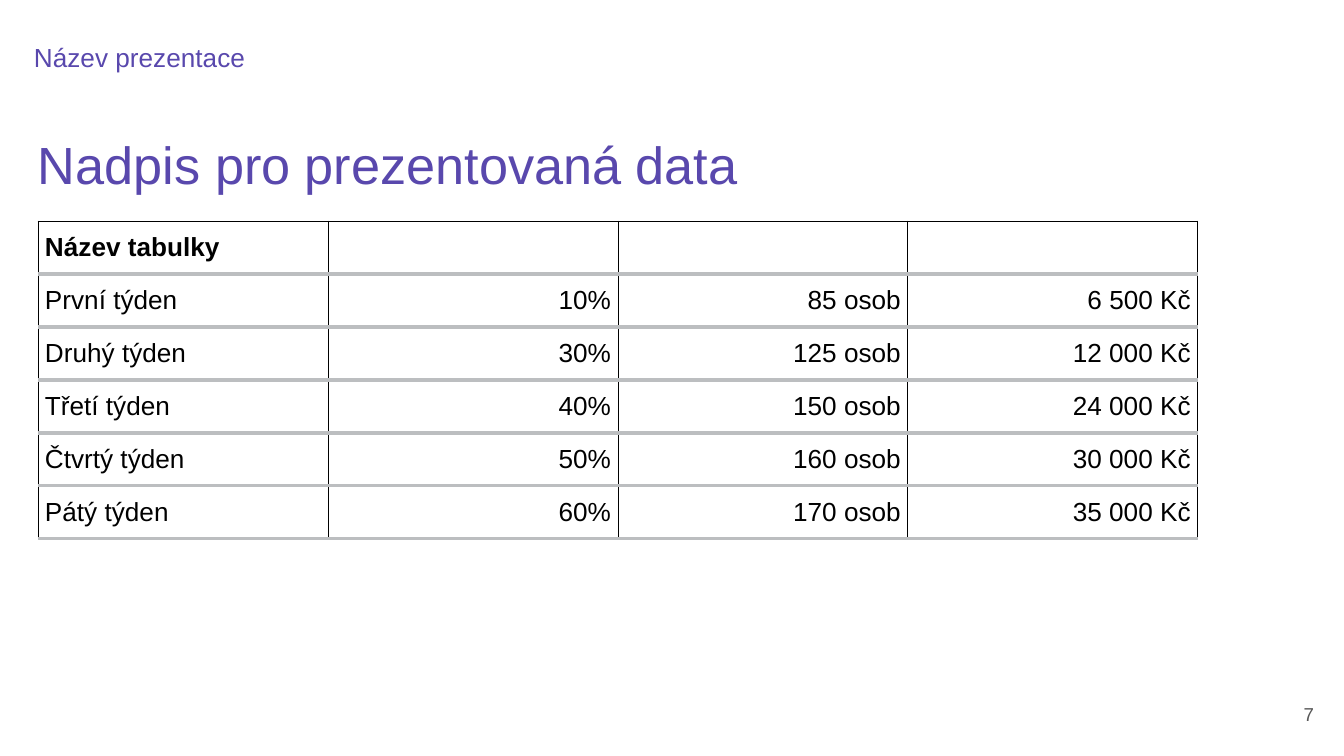
"""Build a slide with a heading and a table of weekly figures."""
from typing import NamedTuple

from lxml import etree
from pptx import Presentation
from pptx.dml.color import RGBColor
from pptx.enum.text import MSO_ANCHOR, MSO_AUTO_SIZE, PP_ALIGN
from pptx.oxml.ns import qn
from pptx.util import Emu, Pt

EMU_PER_PX = 914400 / 134.4
FONT = "Arial"
VIOLET = RGBColor(0x59, 0x48, 0xAD)
GREY = RGBColor(0x58, 0x58, 0x58)
RULE_GREY = RGBColor(0xBC, 0xBE, 0xC0)
BLACK = RGBColor(0, 0, 0)
WHITE = RGBColor(0xFF, 0xFF, 0xFF)
LEFT, RIGHT = PP_ALIGN.LEFT, PP_ALIGN.RIGHT
TOP, MIDDLE = MSO_ANCHOR.TOP, MSO_ANCHOR.MIDDLE
NO_AUTOFIT = MSO_AUTO_SIZE.NONE

COL_WIDTH, ROW_HEIGHT, CELL_MARGIN = 290, 53, 7
ROWS = [
    ("Název tabulky", "", "", ""),
    ("První týden", "10%", "85 osob", "6 500 Kč"),
    ("Druhý týden", "30%", "125 osob", "12 000 Kč"),
    ("Třetí týden", "40%", "150 osob", "24 000 Kč"),
    ("Čtvrtý týden", "50%", "160 osob", "30 000 Kč"),
    ("Pátý týden", "60%", "170 osob", "35 000 Kč"),
]


class Label(NamedTuple):
    text: str
    box: tuple[int, int, int, int]
    margins: tuple[int, int, int, int]
    size: int
    color: RGBColor
    align: PP_ALIGN = LEFT
    anchor: MSO_ANCHOR = TOP
    spacing: float = 1.0
    indent: tuple[int, int] = (0, 0)


class Border(NamedTuple):
    side: str
    color: RGBColor
    width: float


TITLE = Label("Nadpis pro prezentovaná data", (38, 113, 1111, 85),
              (0, 13, 13, 13), 28, VIOLET, spacing=1.1)
DECK_NAME = Label("Název prezentace", (17, 38, 1111, 52),
                  (0, 0, 13, 13), 14, VIOLET, spacing=1.1, indent=(51, -34))
PAGE_NUMBER = Label("7", (1277, 691, 50, 47), (13, 13, 13, 13), 10, GREY,
                    RIGHT, MIDDLE)


def px(n: int) -> Emu:
    """Turn pixels into EMU."""
    return Emu(round(n * EMU_PER_PX))


def set_font(p, size: int, color: RGBColor, bold: bool = False) -> None:
    """Format all runs of a paragraph."""
    p.font.name = FONT
    p.font.size = Pt(size)
    p.font.bold = bold
    p.font.color.rgb = color


def format_label(sp, label: Label) -> None:
    """Place a shape and fill it with a label."""
    sp.left, sp.top, sp.width, sp.height = map(px, label.box)
    tf = sp.text_frame
    tf.word_wrap = True
    tf.auto_size = NO_AUTOFIT
    tf.vertical_anchor = label.anchor
    (tf.margin_left, tf.margin_top,
     tf.margin_right, tf.margin_bottom) = map(px, label.margins)
    tf.text = label.text
    p = tf.paragraphs[0]
    p.alignment = label.align
    p.line_spacing = label.spacing
    margin, first = label.indent
    pPr = p._p.get_or_add_pPr()
    pPr.set("marL", str(px(margin)))
    pPr.set("indent", str(px(first)))
    set_font(p, label.size, label.color)


def add_border(cell, border: Border) -> None:
    """Draw one side of a table cell."""
    tcPr = cell._tc.get_or_add_tcPr()
    ln = etree.SubElement(tcPr, qn(f"a:ln{border.side}"), w=str(Pt(border.width)))
    fill = etree.SubElement(ln, qn("a:solidFill"))
    etree.SubElement(fill, qn("a:srgbClr"), val=str(border.color))


def format_cell(cell, text: str, row: int, col: int) -> None:
    """Write and style one table cell."""
    header = row == 0
    top = Border("T", BLACK, 0.5) if header else Border("T", RULE_GREY, 2)
    for border in (Border("L", BLACK, 0.5), Border("R", BLACK, 0.5),
                   top, Border("B", RULE_GREY, 2)):
        add_border(cell, border)
    if header:
        cell.fill.background()
    else:
        cell.fill.solid()
        cell.fill.fore_color.rgb = WHITE
    cell.margin_left = cell.margin_right = px(CELL_MARGIN)
    cell.margin_top = cell.margin_bottom = px(CELL_MARGIN)
    cell.vertical_anchor = MIDDLE
    cell.text = text
    p = cell.text_frame.paragraphs[0]
    p.alignment = RIGHT if col else LEFT
    set_font(p, 14, BLACK, bold=header)


def add_data_table(slide, left: int, top: int) -> None:
    """Add the table of weekly figures."""
    n_rows, n_cols = len(ROWS), len(ROWS[0])
    table = slide.shapes.add_table(
        n_rows, n_cols, px(left), px(top),
        px(n_cols * COL_WIDTH), px(n_rows * ROW_HEIGHT)).table
    table.horz_banding = False
    for column in table.columns:
        column.width = px(COL_WIDTH)
    for row, texts in enumerate(ROWS):
        table.rows[row].height = px(ROW_HEIGHT)
        for col, text in enumerate(texts):
            format_cell(table.cell(row, col), text, row, col)


def main() -> None:
    """Build and save the slide."""
    prs = Presentation()
    prs.slide_width, prs.slide_height = px(1344), px(756)
    s = prs.slides.add_slide(prs.slide_layouts[5])
    format_label(s.shapes.title, TITLE)
    for label in (PAGE_NUMBER, DECK_NAME):
        format_label(s.shapes.add_textbox(*map(px, label.box)), label)
    add_data_table(s, 38, 221)
    prs.save("out.pptx")


if __name__ == "__main__":
    main()
